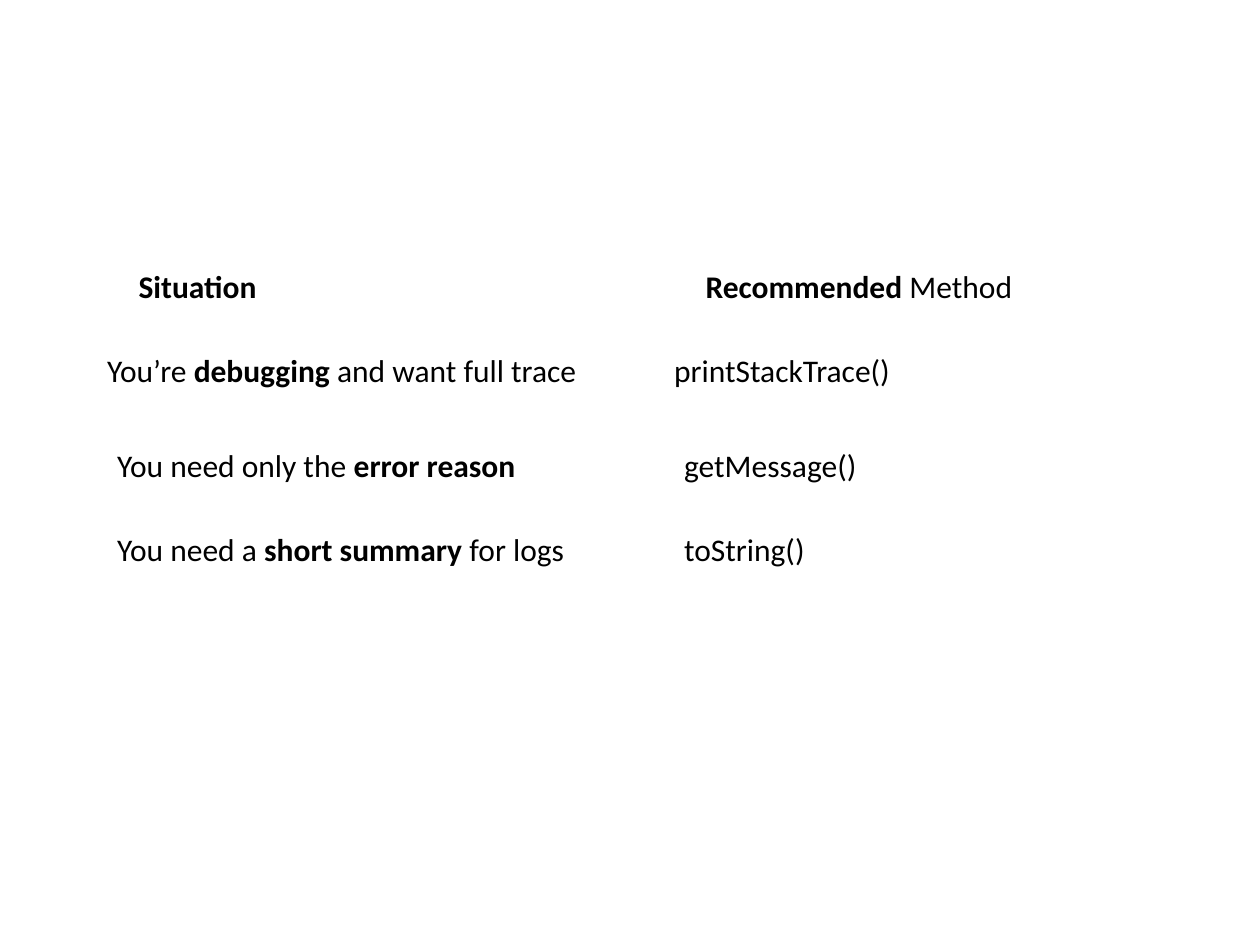
from dataclasses import dataclass

from pptx import Presentation
from pptx.dml.color import RGBColor as RGB
from pptx.enum.text import MSO_ANCHOR as ANCHOR
from pptx.util import Inches, Pt


@dataclass(frozen=True)
class Theme:
    font: str = "Calibri"
    size: int = 18
    ink: RGB = RGB(0, 0, 0)


THEME = Theme()
COL_W, ROW_H = 4.5, 0.4

ROWS = [
    (1, 2.08, [[("Situation", True)],
               [("Recommended", True), (" Method", False)]]),
    (0.75, 2.75, [[("You’re ", False), ("debugging", True), (" and want full trace", False)],
                  [("printStackTrace()", False)]]),
    (0.83, 3.5, [[("You need only the ", False), ("error reason", True)],
                 [("getMessage()", False)]]),
    (0.83, 4.17, [[("You need a ", False), ("short summary", True), (" for logs", False)],
                  [("toString()", False)]]),
]


def add_run(p, text, *, bold=False, size=THEME.size, color=THEME.ink):
    """Append formatted text to a paragraph."""
    r = p.add_run()
    r.text = text
    r.font.name = THEME.font
    r.font.size = Pt(size)
    r.font.bold = bold
    r.font.color.rgb = color


def add_row_table(slide, left, top, cells):
    """Add a plain one-row table whose cells hold (text, bold) pieces."""
    table = slide.shapes.add_table(
        1, len(cells), Inches(left), Inches(top),
        Inches(COL_W * len(cells)), Inches(ROW_H)).table
    table.first_row = table.horz_banding = False
    for cell, pieces in zip(table.rows[0].cells, cells):
        cell.fill.background()
        cell.vertical_anchor = ANCHOR.MIDDLE
        for text, bold in pieces:
            add_run(cell.text_frame.paragraphs[0], text, bold=bold)


def main():
    """Build the slide of recommended methods."""
    prs = Presentation()
    prs.slide_width, prs.slide_height = Inches(10), Inches(7.5)
    slide = prs.slides.add_slide(prs.slide_layouts[6])
    for left, top, cells in ROWS:
        add_row_table(slide, left, top, cells)
    prs.save("out.pptx")


if __name__ == "__main__":
    main()
